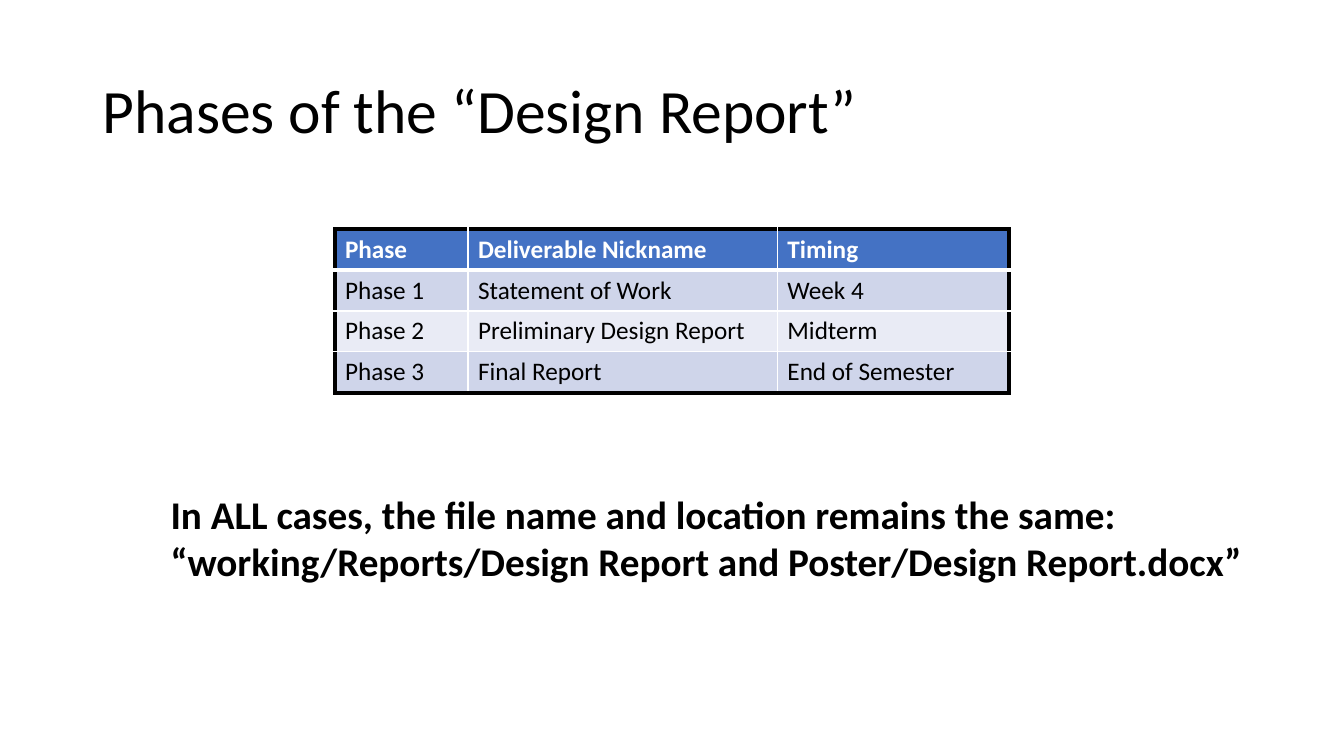
import pptx
import pptx.dml.color
import pptx.enum.text
import pptx.oxml.ns
import pptx.util
from lxml import etree

Pt = pptx.util.Pt

TITLE = "Phases of the “Design Report”"
ROWS = [
    ("Phase", "Deliverable Nickname", "Timing"),
    ("Phase 1", "Statement of Work", "Week 4"),
    ("Phase 2", "Preliminary Design Report", "Midterm"),
    ("Phase 3", "Final Report", "End of Semester"),
]
NOTE = [
    "In ALL cases, the file name and location remains the same:",
    "“working/Reports/Design Report and Poster/Design Report.docx”",
]
COLORS = {"black": "000000", "white": "FFFFFF", "header": "4472C4",
          "odd": "CFD5EA", "even": "E9EBF5"}
FONT = "Calibri"
COL_WIDTHS = [95, 221, 165.6]
ROW_HEIGHT = 29.2


def rgb(name):
    return pptx.dml.color.RGBColor.from_string(COLORS[name])


def write(p, text, size=18, color="black", bold=False):
    r = p.add_run()
    r.text = text
    r.font.name = FONT
    r.font.size = Pt(size)
    r.font.bold = bold
    r.font.color.rgb = rgb(color)


def set_border(cell, side, color, width):
    """Add one cell edge; edges go before the cell's fill."""
    qn = pptx.oxml.ns.qn
    tc_pr = cell._tc.get_or_add_tcPr()
    line = etree.Element(qn("a:" + side), w=str(Pt(width)))
    fill = etree.SubElement(line, qn("a:solidFill"))
    etree.SubElement(fill, qn("a:srgbClr"), val=COLORS[color])
    tc_pr.insert(len(tc_pr.findall("*")) - 1, line)


prs = pptx.Presentation()
prs.slide_width, prs.slide_height = Pt(960), Pt(540)
s = prs.slides.add_slide(prs.slide_layouts[5])

# Title
title = s.shapes.title
title.left, title.top, title.width, title.height = Pt(66), Pt(28.75), Pt(828), Pt(104.4)
tf = title.text_frame
tf.vertical_anchor = pptx.enum.text.MSO_ANCHOR.MIDDLE
p = tf.paragraphs[0]
p.alignment = pptx.enum.text.PP_ALIGN.LEFT
p.line_spacing = 0.9
write(p, TITLE, size=44)

# Phase table: thick black frame, thin white grid, thick white line under header
last_row, last_col = len(ROWS) - 1, len(COL_WIDTHS) - 1
table = s.shapes.add_table(len(ROWS), len(COL_WIDTHS), Pt(239.3), Pt(163.7),
                           Pt(sum(COL_WIDTHS)), Pt(ROW_HEIGHT * len(ROWS))).table
for column, width in zip(table.columns, COL_WIDTHS):
    column.width = Pt(width)
for i, row in enumerate(ROWS):
    table.rows[i].height = Pt(ROW_HEIGHT)
    for j, text in enumerate(row):
        cell = table.cell(i, j)
        header = i == 0
        cell.fill.solid()
        cell.fill.fore_color.rgb = rgb("header" if header else "odd" if i % 2 else "even")
        write(cell.text_frame.paragraphs[0], text,
              color="white" if header else "black", bold=header)
        frame = {"lnL": j == 0, "lnR": j == last_col, "lnT": header, "lnB": i == last_row}
        for side, outer in frame.items():
            under_header = (i, side) in [(0, "lnB"), (1, "lnT")]
            set_border(cell, side, "black" if outer else "white",
                       3 if outer or under_header else 1)

# File location note
tf = s.shapes.add_textbox(Pt(114.8), Pt(346.3), Pt(787.7), Pt(75.1)).text_frame
tf.word_wrap = False
tf.auto_size = pptx.enum.text.MSO_AUTO_SIZE.SHAPE_TO_FIT_TEXT
for i, text in enumerate(NOTE):
    p = tf.add_paragraph() if i else tf.paragraphs[0]
    write(p, text, size=28, bold=True)

prs.save("out.pptx")
